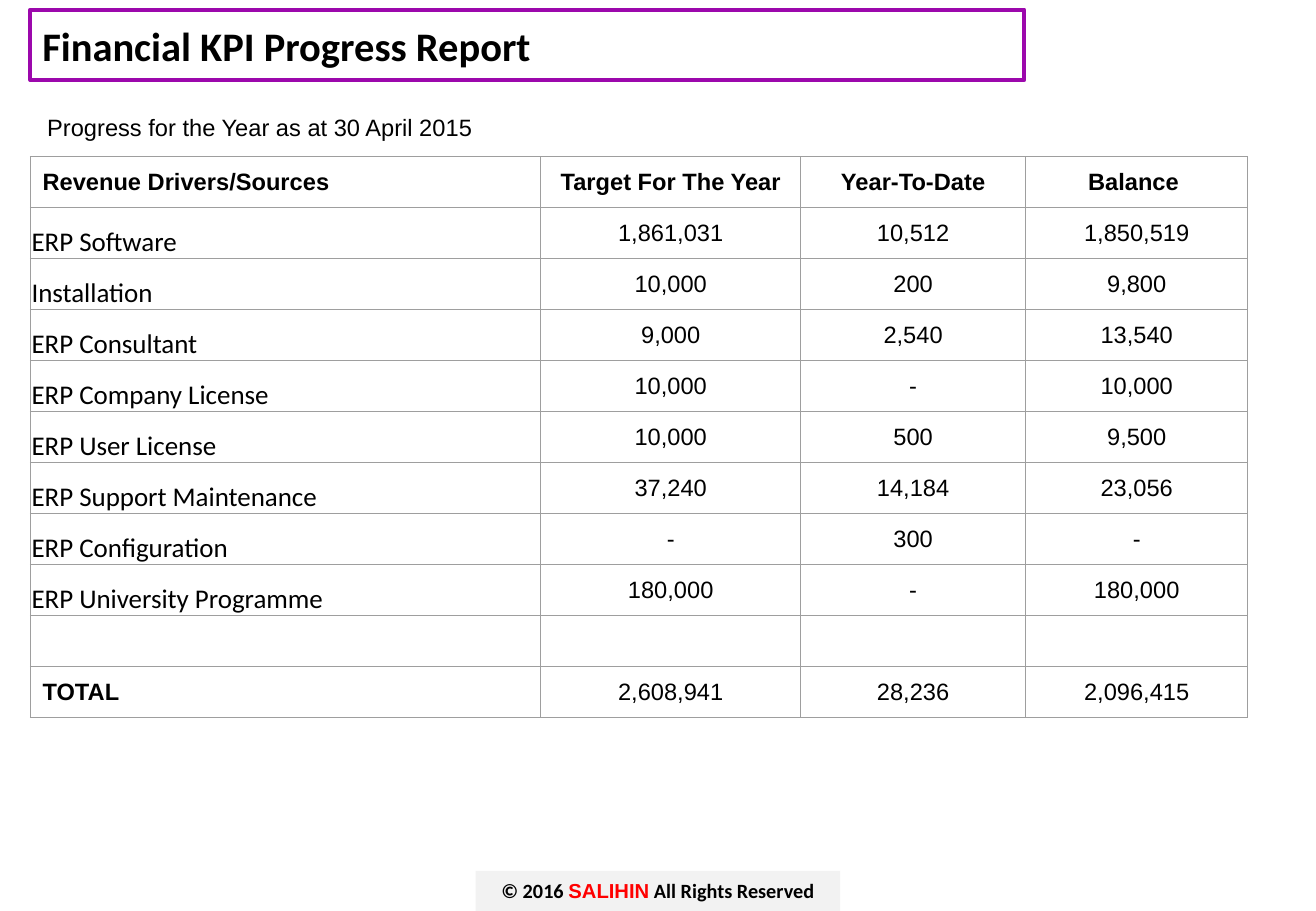
import pptx
import pptx.dml.color
import pptx.enum.shapes
import pptx.enum.text
import pptx.oxml
import pptx.oxml.ns
import pptx.util

Inches = pptx.util.Inches
Pt = pptx.util.Pt
Align = pptx.enum.text.PP_ALIGN
Anchor = pptx.enum.text.MSO_ANCHOR

WIDTH, HEIGHT = 10.83, 7.5
LEFT = 0.25
COLUMNS = [4.2, 2.14, 1.85, 1.83]
ROW_HEIGHT = 0.42
HEADINGS = ["Revenue Drivers/Sources", "Target For The Year", "Year-To-Date", "Balance "]
REVENUES = [
    ["ERP Software", "1,861,031", "10,512", "1,850,519"],
    ["Installation", "10,000", "200", "9,800"],
    ["ERP Consultant", "9,000", "2,540", "13,540"],
    ["ERP Company License", "10,000", "-", "10,000"],
    ["ERP User License", "10,000", "500", "9,500"],
    ["ERP Support Maintenance", "37,240", "14,184", "23,056"],
    ["ERP Configuration", "-", "300", "-"],
    ["ERP University Programme", "180,000", "-", "180,000"],
]
BLANK = ["", "", "", ""]
TOTAL = ["TOTAL", "2,608,941", "28,236", "2,096,415"]


def colour(code):
    """Turn a hex string into a colour."""
    return pptx.dml.color.RGBColor.from_string(code)


def add_span(para, text, size, font="Arial", bold=False, code="000000"):
    """Append one formatted run to a paragraph."""
    span = para.add_run()
    span.text = text
    span.font.size = Pt(size)
    span.font.name = font
    span.font.bold = bold
    span.font.color.rgb = colour(code)


def set_margins(holder, left, top, right, bottom):
    """Set the insets of a text frame or a cell, in inches."""
    holder.margin_left, holder.margin_top = Inches(left), Inches(top)
    holder.margin_right, holder.margin_bottom = Inches(right), Inches(bottom)


def add_panel(page, box, align, fill=None, line=None):
    """Draw a rectangle and return its first paragraph."""
    panel = page.shapes.add_shape(
        pptx.enum.shapes.MSO_SHAPE.RECTANGLE, *[Inches(length) for length in box])
    panel.shadow.inherit = False
    if fill:
        panel.fill.solid()
        panel.fill.fore_color.rgb = colour(fill)
    else:
        panel.fill.background()
    if line:
        panel.line.color.rgb = colour(line)
        panel.line.width = Pt(2.25)
    else:
        panel.line.fill.background()
    frame = panel.text_frame
    frame.word_wrap = True
    frame.vertical_anchor = Anchor.MIDDLE
    set_margins(frame, 0.1, 0.05, 0.1, 0.05)
    frame.paragraphs[0].alignment = align
    return frame.paragraphs[0]


def add_title(page, box):
    """Place the outlined title."""
    para = add_panel(page, box, Align.LEFT, line="9C08AC")
    add_span(para, "Financial KPI Progress Report", 24, "Calibri", True)


def add_footer(page, box):
    """Place the copyright strip."""
    para = add_panel(page, box, Align.CENTER, fill="F2F2F2")
    add_span(para, "© 2016 ", 12, "Calibri", True)
    add_span(para, "SALIHIN", 12, "Arial", True, "FF0000")
    add_span(para, " All Rights Reserved", 12, "Calibri", True)


def add_caption(page, box):
    """Place the reporting date above the table."""
    frame = page.shapes.add_textbox(*[Inches(length) for length in box]).text_frame
    frame.word_wrap = True
    set_margins(frame, 0.1, 0.1, 0.1, 0.1)
    add_span(frame.paragraphs[0], "Progress for the Year as at 30 April 2015", 14)


def add_borders(cell):
    """Give a cell thin grey borders on all sides."""
    properties = cell._tc.get_or_add_tcPr()
    for position, side in enumerate(["lnL", "lnR", "lnT", "lnB"]):
        border = pptx.oxml.parse_xml(
            f'<a:{side} {pptx.oxml.ns.nsdecls("a")} w="9525"><a:solidFill>'
            f'<a:srgbClr val="9E9E9E"/></a:solidFill></a:{side}>')
        properties.insert(position, border)


def add_revenue_table(page, box):
    """Place the table of targets, results and balances."""
    records = [HEADINGS, *REVENUES, BLANK, TOTAL]
    table = page.shapes.add_table(
        len(records), len(COLUMNS), *[Inches(length) for length in box]).table
    table.first_row = table.horz_banding = False
    for column, width in zip(table.columns, COLUMNS):
        column.width = Inches(width)
    for row, record in enumerate(records):
        table.rows[row].height = Inches(ROW_HEIGHT)
        for column, text in enumerate(record):
            cell = table.cell(row, column)
            cell.fill.background()
            add_borders(cell)
            if not text:
                continue
            para = cell.text_frame.paragraphs[0]
            if column == 0 and record in REVENUES:
                cell.vertical_anchor = Anchor.BOTTOM
                set_margins(cell, 0.01, 0.01, 0.01, 0)
                add_span(para, text, 16, "Calibri")
            else:
                set_margins(cell, 0.1, 0.1, 0.1, 0.1)
                para.alignment = Align.CENTER if column else Align.LEFT
                add_span(para, text, 14, bold=record is HEADINGS or text == "TOTAL")


def main():
    """Build the report slide and save it."""
    deck = pptx.Presentation()
    deck.slide_width, deck.slide_height = Inches(WIDTH), Inches(HEIGHT)
    page = deck.slides.add_slide(deck.slide_layouts[6])
    add_footer(page, ((WIDTH - 3) / 2, HEIGHT - 0.33, 3, 0.33))
    add_title(page, (LEFT, 0.08, 8.18, 0.58))
    add_revenue_table(page, (LEFT, 1.29, sum(COLUMNS), ROW_HEIGHT * 11))
    add_caption(page, (0.29, 0.83, 4.06, 0.46))
    deck.save("out.pptx")


if __name__ == "__main__":
    main()
